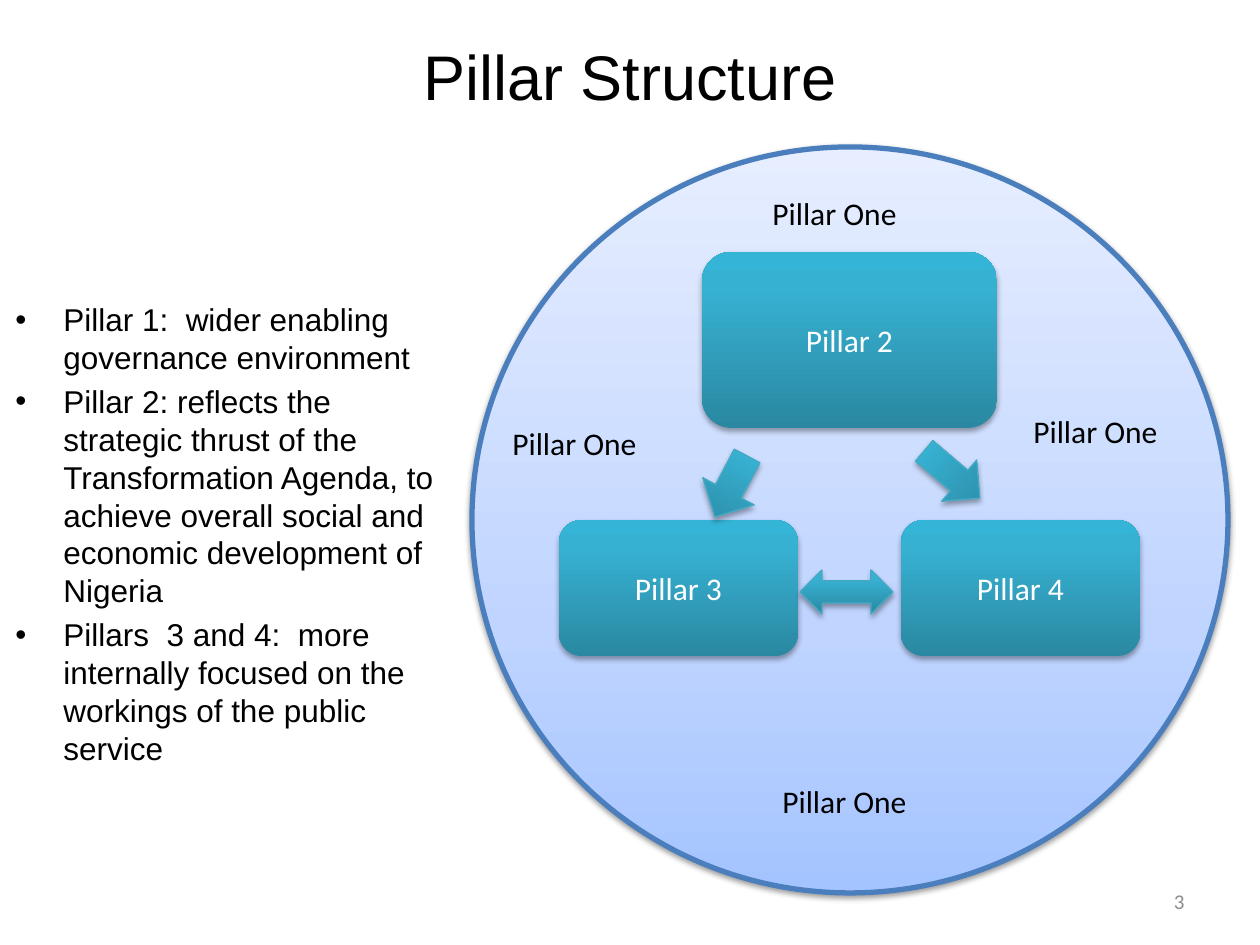
from lxml import etree
from pptx import Presentation
from pptx import util as u
from pptx.dml.color import RGBColor
from pptx.enum import shapes, text
from pptx.oxml import parse_xml
from pptx.oxml.ns import nsdecls, qn

SCALE = u.Inches(1) / 126
COLORS = {
    "text": "000000", "on_fill": "FFFFFF", "number": "8C8C8C",
    "ring": "4B7EBC", "arrow_line": "46AAC5", "shadow": "000000",
    "pale_0": "A4C4FF", "pale_1": "BFD4FF", "pale_2": "E6EEFF",
    "teal_0": "2A88A2", "teal_1": "37B1D2", "teal_2": "34B4D6",
}
PALE = ((0, "pale_0"), (35, "pale_1"), (100, "pale_2"))
TEAL = ((0, "teal_0"), (80, "teal_1"), (100, "teal_2"))
BULLETS = (
    "Pillar 1:  wider enabling governance environment",
    "Pillar 2: reflects the strategic thrust of the Transformation Agenda, "
    "to achieve overall social and economic development of Nigeria",
    "Pillars  3 and 4:  more internally focused on the workings of the public service",
)


def px(*values):
    """Turn px lengths into EMU."""
    return [round(v * SCALE) for v in values]


def inside(box, x, y, w, h):
    """Shift a rectangle by the origin of its box."""
    return box[0] + x, box[1] + y, w, h


def bullet(p):
    """Give a paragraph a hanging bullet and proportional space before."""
    pPr = p._p.get_or_add_pPr()
    indent = px(48)[0]
    pPr.set("marL", str(indent))
    pPr.set("indent", str(-indent))
    before = etree.SubElement(pPr, qn("a:spcBef"))
    etree.SubElement(before, qn("a:spcPct")).set("val", "20000")
    etree.SubElement(pPr, qn("a:buFont")).set("typeface", "Arial")
    etree.SubElement(pPr, qn("a:buChar")).set("char", "•")


def write(tf, *lines, size=18, font="Calibri", color="text", align="LEFT",
          anchor="TOP", bullets=False):
    """Fill a text frame with formatted paragraphs."""
    tf.word_wrap = True
    tf.vertical_anchor = getattr(text.MSO_ANCHOR, anchor)
    for i, line in enumerate(lines):
        p = tf.add_paragraph() if i else tf.paragraphs[0]
        p.alignment = getattr(text.PP_ALIGN, align)
        if bullets:
            bullet(p)
        r = p.add_run()
        r.text = line
        r.font.size = u.Pt(size)
        r.font.name = font
        r.font.color.rgb = RGBColor.from_string(COLORS[color])


def add_text(s, box, *lines, **fmt):
    """Add a text box."""
    write(s.shapes.add_textbox(*px(*box)).text_frame, *lines, **fmt)


def add_shape(s, kind, box, stops, line=None, width=0.75, turn=0,
              alpha=35, dist=1.8):
    """Add a preset shape with an upward gradient and a soft shadow."""
    sp = s.shapes.add_shape(getattr(shapes.MSO_SHAPE, kind), *px(*box))
    sp.rotation = turn
    sp.fill.background()
    spPr = sp._element.spPr
    gs = "".join(f'<a:gs pos="{pos * 1000}"><a:srgbClr val="{COLORS[c]}"/></a:gs>'
                 for pos, c in stops)
    spPr.replace(spPr.find(qn("a:noFill")), parse_xml(
        f'<a:gradFill {nsdecls("a")} rotWithShape="1"><a:gsLst>{gs}</a:gsLst>'
        '<a:lin ang="16200000" scaled="0"/></a:gradFill>'))
    if line:
        sp.line.color.rgb = RGBColor.from_string(COLORS[line])
        sp.line.width = u.Pt(width)
    else:
        sp.line.fill.background()
    sp.shadow.inherit = False
    spPr.find(qn("a:effectLst")).append(parse_xml(
        f'<a:outerShdw {nsdecls("a")} blurRad="{u.Pt(3.1)}" dist="{u.Pt(dist)}" '
        f'dir="5400000" rotWithShape="0"><a:srgbClr val="{COLORS["shadow"]}">'
        f'<a:alpha val="{alpha * 1000}"/></a:srgbClr></a:outerShdw>'))
    return sp


def pillar_diagram(s, box):
    """Draw the enclosing pillar with three linked pillars inside it."""
    add_shape(s, "OVAL", box, PALE, line="ring", width=3, alpha=38, dist=1.6)
    for name, place in (("Pillar 2", (230, 105, 295, 176)),
                        ("Pillar 3", (87, 373, 239, 136)),
                        ("Pillar 4", (429, 373, 239, 136))):
        sp = add_shape(s, "ROUNDED_RECTANGLE", inside(box, *place), TEAL)
        write(sp.text_frame, name, color="on_fill", align="CENTER", anchor="MIDDLE")
    for x, y in ((288, 41), (549, 259), (298, 629), (28, 271)):
        add_text(s, inside(box, x, y, 192, 46), "Pillar One")
    for kind, place, turn in (("LEFT_RIGHT_ARROW", (328, 423, 93, 44), 0),
                              ("DOWN_ARROW", (230, 305, 58, 69), 27.9),
                              ("DOWN_ARROW", (453, 291, 54, 73), 310.3)):
        add_shape(s, kind, inside(box, *place), TEAL, line="arrow_line", turn=turn)


def main():
    """Build the slide and save it."""
    prs = Presentation()
    prs.slide_width, prs.slide_height = px(1260, 945)
    s = prs.slides.add_slide(prs.slide_layouts[6])
    add_text(s, (63, -4, 1134, 158), "Pillar Structure", size=36, font="Arial",
             align="CENTER", anchor="MIDDLE")
    add_text(s, (3, 294, 451, 510), *BULLETS, font="Arial", bullets=True)
    pillar_diagram(s, (472, 147, 756, 746))
    add_text(s, (903, 876, 294, 50), "3", size=12, color="number",
             align="RIGHT", anchor="MIDDLE")
    prs.save("out.pptx")


if __name__ == "__main__":
    main()
